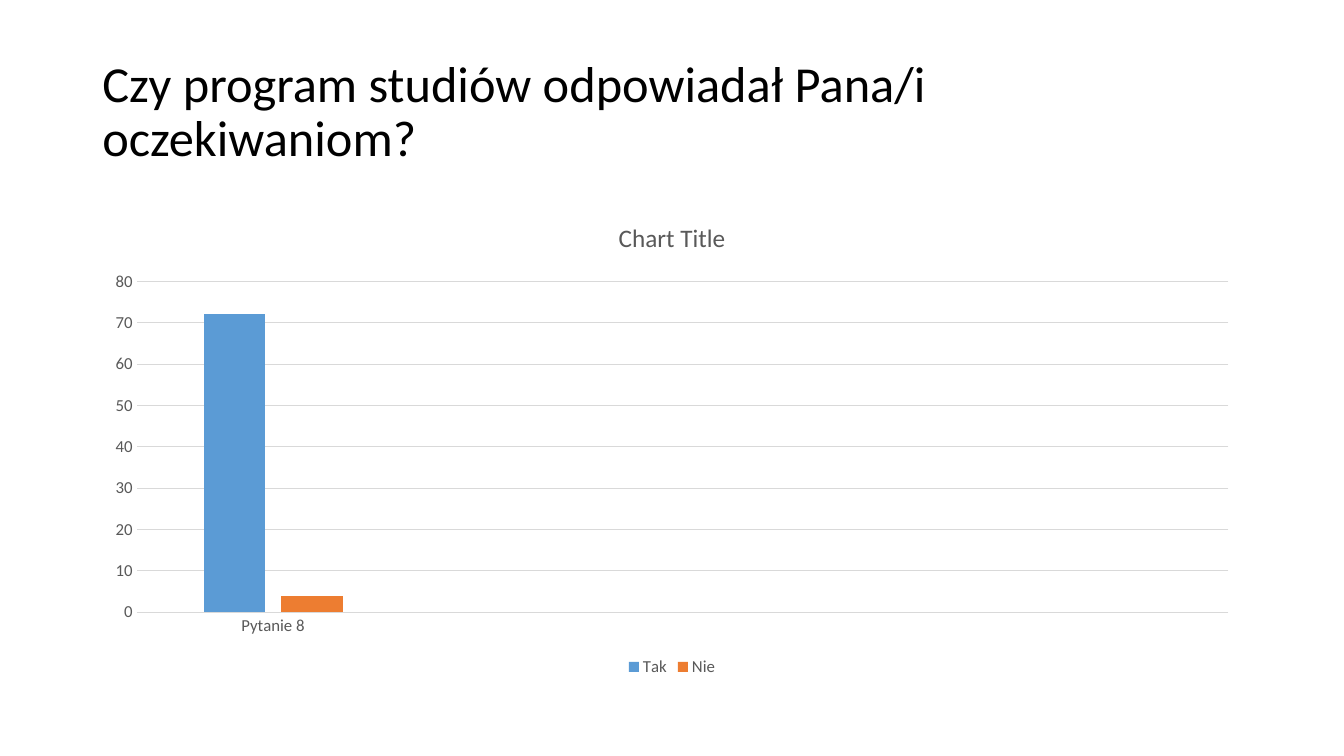
from dataclasses import dataclass

from pptx import Presentation
from pptx.chart.data import CategoryChartData
from pptx.dml.color import RGBColor
from pptx.enum.chart import XL_CHART_TYPE, XL_LEGEND_POSITION, XL_TICK_MARK
from pptx.enum.text import MSO_ANCHOR
from pptx.util import Cm, Pt


@dataclass(frozen=True)
class Theme:
    font: str = "Calibri"
    heading: RGBColor = RGBColor(0x00, 0x00, 0x00)
    label: RGBColor = RGBColor(0x59, 0x59, 0x59)
    rule: RGBColor = RGBColor(0xD9, 0xD9, 0xD9)
    yes: RGBColor = RGBColor(0x5B, 0x9B, 0xD5)
    no: RGBColor = RGBColor(0xED, 0x7D, 0x31)
    heading_size: Pt = Pt(36)
    chart_title_size: Pt = Pt(18)
    label_size: Pt = Pt(12)
    rule_width: Pt = Pt(0.75)


THEME = Theme()


def style_font(font, size, color):
    font.name = THEME.font
    font.size = size
    font.bold = False
    font.color.rgb = color


def style_rule(line):
    line.color.rgb = THEME.rule
    line.width = THEME.rule_width


def add_question(slide, left, top, width, height):
    frame = slide.shapes.add_textbox(left, top, width, height).text_frame
    frame.word_wrap = True
    frame.vertical_anchor = MSO_ANCHOR.MIDDLE
    frame.text = "Czy program studiów odpowiadał Pana/i oczekiwaniom?"
    question = frame.paragraphs[0]
    question.line_spacing = 0.9
    style_font(question.runs[0].font, THEME.heading_size, THEME.heading)


def add_answers(slide, left, top, width, height):
    answers = CategoryChartData()
    answers.categories = ["Pytanie 8", "", "", ""]
    answers.add_series("Tak", [72, None, None, None])
    answers.add_series("Nie", [4, None, None, None])
    chart = slide.shapes.add_chart(
        XL_CHART_TYPE.COLUMN_CLUSTERED, left, top, width, height, answers
    ).chart
    style_font(chart.font, THEME.label_size, THEME.label)

    chart.has_title = True
    caption = chart.chart_title.text_frame
    caption.text = "Chart Title"
    style_font(caption.paragraphs[0].runs[0].font, THEME.chart_title_size, THEME.label)
    chart.chart_title.include_in_layout = False

    columns = chart.plots[0]
    columns.gap_width = 219
    columns.overlap = -27
    columns.vary_by_categories = False
    for answer, color in zip(columns.series, (THEME.yes, THEME.no)):
        answer.format.fill.solid()
        answer.format.fill.fore_color.rgb = color

    for axis in (chart.category_axis, chart.value_axis):
        axis.major_tick_mark = XL_TICK_MARK.NONE
        axis.minor_tick_mark = XL_TICK_MARK.NONE
        style_font(axis.tick_labels.font, THEME.label_size, THEME.label)
    style_rule(chart.category_axis.format.line)
    scale = chart.value_axis
    scale.minimum_scale = 0
    scale.maximum_scale = 80
    scale.major_unit = 10
    scale.format.line.fill.background()
    scale.has_major_gridlines = True
    style_rule(scale.major_gridlines.format.line)

    chart.has_legend = True
    chart.legend.position = XL_LEGEND_POSITION.BOTTOM
    chart.legend.include_in_layout = False
    style_font(chart.legend.font, THEME.label_size, THEME.label)


def main():
    presentation = Presentation()
    presentation.slide_width = Cm(33.87)
    presentation.slide_height = Cm(19.05)
    slide = presentation.slides.add_slide(presentation.slide_layouts[6])
    margin = Cm(2.33)
    content_width = presentation.slide_width - 2 * margin
    add_question(slide, margin, Cm(1.01), content_width, Cm(3.68))
    add_answers(slide, margin, Cm(5.07), content_width, Cm(12.09))
    presentation.save("out.pptx")


if __name__ == "__main__":
    main()
